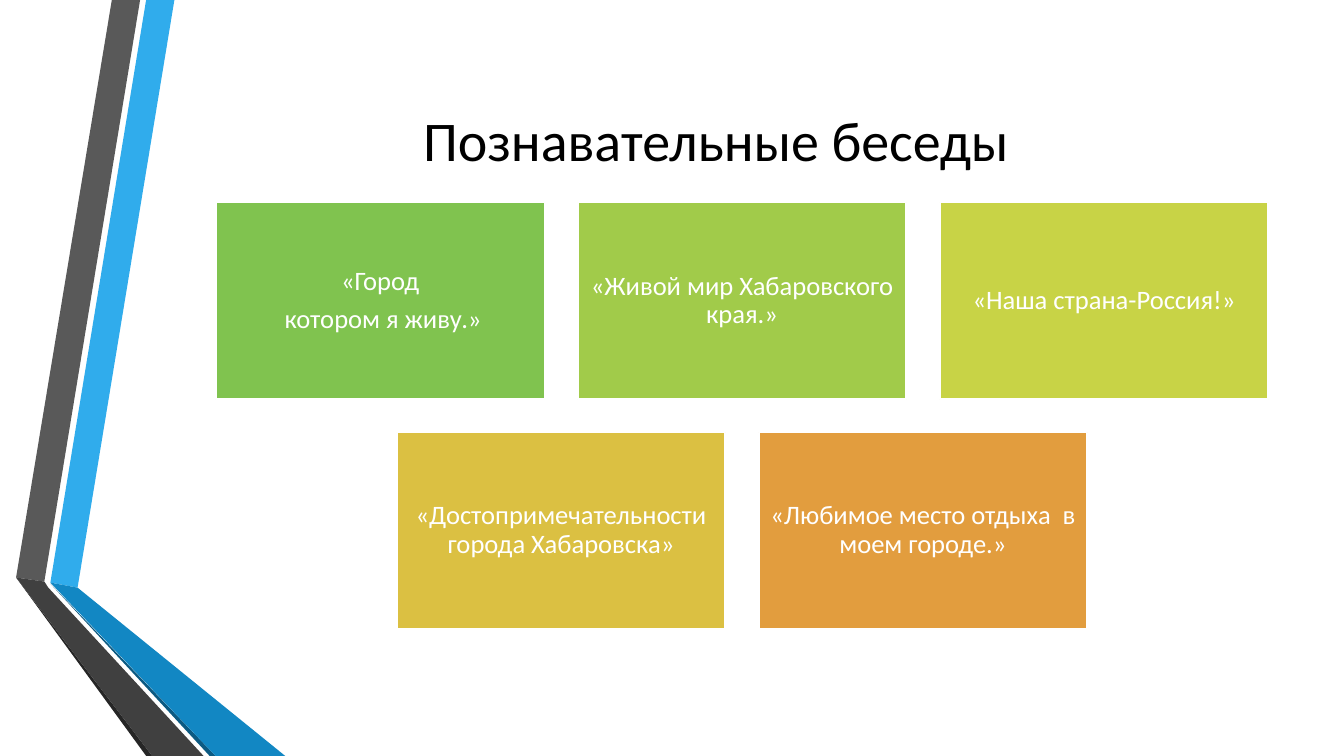
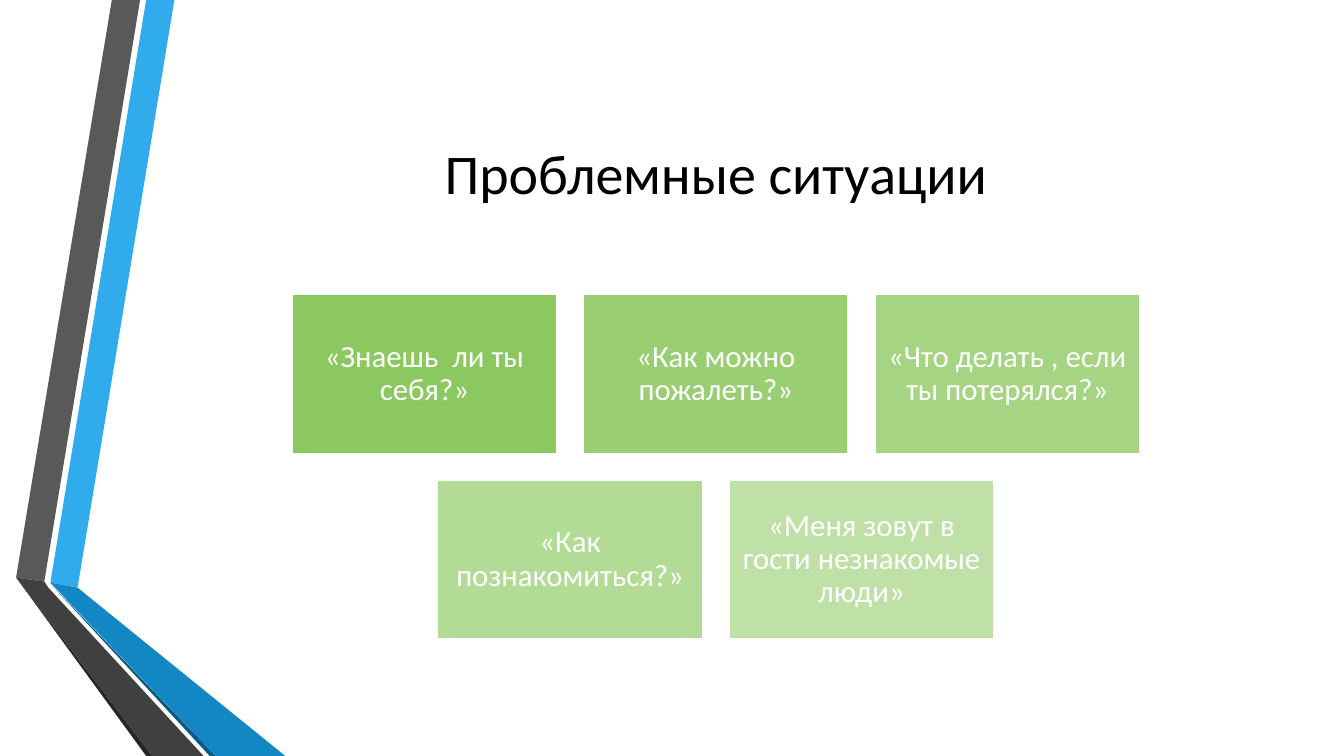
"""Build two slides of topic cards beside a folded ribbon."""
from dataclasses import dataclass

from lxml.etree import SubElement
from pptx import Presentation
from pptx.dml.color import RGBColor as Rgb
from pptx.enum.shapes import MSO_SHAPE as Shape
from pptx.enum.text import MSO_ANCHOR as Anchor, PP_ALIGN as Align
from pptx.oxml.ns import qn
from pptx.util import Inches, Pt


@dataclass(frozen=True)
class Theme:
    """Colours and type sizes of the presentation."""
    font: str = "Calibri"
    title_color: str = "000000"
    title_size: int = 40
    white: str = "FFFFFF"
    green: str = "80C34F"
    rainbow: tuple = ("80C34F", "A1CB4A", "C8D346", "DBC042", "E29D3E")
    blue: str = "30ACEC"
    blue_fold: str = "1287C3"
    blue_shade: str = "0C5A82"
    gray: str = "595959"
    gray_fold: str = "404040"
    gray_shade: str = "262626"


@dataclass(frozen=True)
class CardGrid:
    """Measures of a centred card grid, in inches, and its text size."""
    center: float
    top: float
    width: float
    height: float
    gap: float
    inset: float
    text_size: int
    columns: int = 3


THEME = Theme()
RIBBON = (
    (THEME.blue, [(0.5, 5.78), (0.77, 5.83), (1.73, 0), (1.45, 0)]),
    (THEME.gray, [(1.39, 0), (1.11, 0), (0.16, 5.73), (0.44, 5.77)]),
    (THEME.gray_shade, [(0.16, 5.73), (1.45, 7.5), (1.51, 7.5)]),
    (THEME.blue_shade, [(0.5, 5.79), (2.08, 7.5), (2.14, 7.5)]),
    (THEME.blue_fold, [(0.5, 5.78), (2.14, 7.5), (2.83, 7.5), (0.77, 5.83)]),
    (THEME.gray_fold, [(2.02, 7.5), (0.48, 5.83), (0.44, 5.77),
                       (0.16, 5.73), (1.51, 7.5)]),
)
TALKS = ("«Город\n котором я живу.»", "«Живой мир Хабаровского края.»",
         "«Наша страна-Россия!»", "«Достопримечательности города Хабаровска»",
         "«Любимое место отдыха  в моем городе.»")
SITUATIONS = ("«Знаешь  ли ты себя?»", "«Как можно пожалеть?»",
              "«Что делать , если ты потерялся?»", "«Как познакомиться?»",
              "«Меня зовут в гости незнакомые люди»")


def place(item, left, top, width, height):
    """Set the position and size of an item in inches."""
    item.left, item.top = Inches(left), Inches(top)
    item.width, item.height = Inches(width), Inches(height)


def style_text(frame, size, color):
    """Centre the text and give every run the theme font."""
    frame.word_wrap = True
    frame.vertical_anchor = Anchor.MIDDLE
    for paragraph in frame.paragraphs:
        paragraph.alignment = Align.CENTER
        for run in paragraph.runs:
            run.font.name = THEME.font
            run.font.size = Pt(size)
            run.font.color.rgb = Rgb.from_string(color)


def paint(shape, color, opacity=100):
    """Fill a shape with a colour, see-through below full opacity."""
    shape.shadow.inherit = False
    shape.fill.solid()
    shape.fill.fore_color.rgb = Rgb.from_string(color)
    if opacity < 100:
        tint = next(shape.element.spPr.iter(qn("a:srgbClr")))
        SubElement(tint, qn("a:alpha"), val=str(opacity * 1000))


def add_ribbon(slide, master):
    """Draw the ribbon and hand its pieces to the slide master."""
    for number, (color, points) in enumerate(RIBBON, start=100):
        start, *rest = [(Inches(x), Inches(y)) for x, y in points]
        builder = slide.shapes.build_freeform(*start)
        builder.add_line_segments(rest, close=True)
        piece = builder.convert_to_shape()
        paint(piece, color)
        piece.line.fill.background()
        piece.element.nvSpPr.cNvPr.set("id", str(number))
        master.shapes.element.append(piece.element)


def add_title(slide, text, top):
    """Write the slide title."""
    title = slide.shapes.title
    place(title, 1.62, top, 10.96, 1.92)
    title.text_frame.text = text
    style_text(title.text_frame, THEME.title_size, THEME.title_color)


def add_card(slide, grid, left, top, text, color, opacity):
    """Add one coloured card with centred text."""
    card = slide.shapes.add_shape(Shape.RECTANGLE, 0, 0, 0, 0)
    place(card, left, top, grid.width, grid.height)
    paint(card, color, opacity)
    card.line.color.rgb = Rgb.from_string(THEME.white)
    card.line.width = Pt(1.25)
    frame = card.text_frame
    frame.margin_left = frame.margin_right = Inches(grid.inset)
    frame.margin_top = frame.margin_bottom = Inches(grid.inset)
    frame.text = text
    style_text(frame, grid.text_size, THEME.white)
    for paragraph in frame.paragraphs:
        paragraph.line_spacing = 0.9
        paragraph.space_after = Pt(6.5)


def add_cards(slide, grid, texts, colors, opacities):
    """Lay the cards out in rows, each centred on the grid."""
    cards = list(zip(texts, colors, opacities))
    for row, first in enumerate(range(0, len(cards), grid.columns)):
        members = cards[first:first + grid.columns]
        span = len(members) * (grid.width + grid.gap) - grid.gap
        top = grid.top + row * (grid.height + grid.gap)
        for column, card in enumerate(members):
            left = grid.center - span / 2 + column * (grid.width + grid.gap)
            add_card(slide, grid, left, top, *card)


def main():
    """Build and save the presentation."""
    deck = Presentation()
    deck.slide_width, deck.slide_height = Inches(13.33), Inches(7.5)
    title_only = deck.slide_layouts.get_by_name("Title Only")

    talks = deck.slides.add_slide(title_only)
    add_ribbon(talks, deck.slide_master)
    add_title(talks, "Познавательные беседы", 0.42)
    add_cards(talks, CardGrid(7.36, 2.01, 3.26, 1.95, 0.33, 0.08, 19),
              TALKS, THEME.rainbow, [100] * len(TALKS))

    situations = deck.slides.add_slide(title_only)
    add_title(situations, "Проблемные ситуации", 0.75)
    add_cards(situations, CardGrid(7.1, 2.92, 2.63, 1.58, 0.26, 0.09, 22),
              SITUATIONS, [THEME.green] * len(SITUATIONS), range(90, 40, -10))

    deck.save("out.pptx")


if __name__ == "__main__":
    main()
